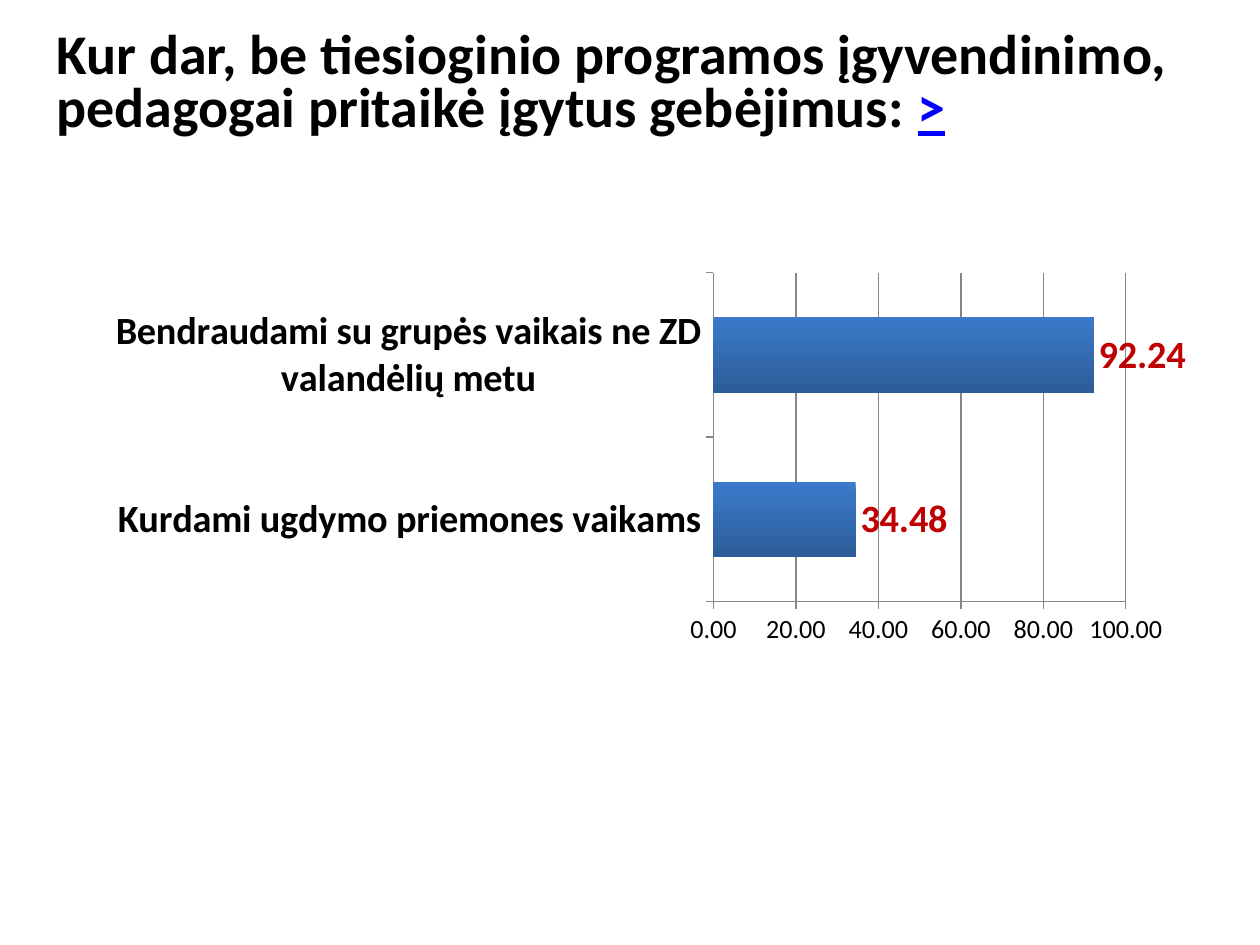
"""Build a slide with a bar chart of where teachers applied their skills."""
from dataclasses import dataclass

from lxml.etree import SubElement
from pptx import Presentation
from pptx.chart.data import CategoryChartData
from pptx.dml.color import RGBColor
from pptx.enum.chart import XL_CHART_TYPE, XL_LABEL_POSITION, XL_TICK_MARK
from pptx.enum.text import MSO_ANCHOR, MSO_AUTO_SIZE, PP_ALIGN
from pptx.oxml.ns import qn
from pptx.util import Emu, Pt


@dataclass(frozen=True)
class Theme:
    font: str = "Calibri"
    ink: str = "000000"
    link: str = "0000FF"
    value: str = "C00000"
    grid: str = "868686"
    bar_top: str = "3B7ACB"
    bar_bottom: str = "2D5D98"
    title_size: int = 32
    label_size: int = 22
    axis_size: int = 15
    chart_size: int = 18


theme = Theme()


def px(length):
    return Emu(round(length * 914400 / 126))


def write(target, text=None, *, size, color=theme.ink, bold=False, underline=None):
    if text is not None:
        target = target.add_run()
        target.text = text
    font = target.font
    font.name = theme.font
    font.size = Pt(size)
    font.bold = bold
    font.underline = underline
    font.color.rgb = RGBColor.from_string(color)


presentation = Presentation()
presentation.slide_width, presentation.slide_height = px(1260), px(945)
slide = presentation.slides.add_slide(presentation.slide_layouts[5])

title = slide.shapes.title
title.left, title.top, title.width, title.height = px(44), px(38), px(1181), px(107)
frame = title.text_frame
frame.word_wrap = True
frame.auto_size = MSO_AUTO_SIZE.NONE
frame.vertical_anchor = MSO_ANCHOR.BOTTOM
paragraph = frame.paragraphs[0]
paragraph.alignment = PP_ALIGN.LEFT
paragraph.line_spacing = 0.8
write(
    paragraph,
    "Kur dar, be tiesioginio programos įgyvendinimo, pedagogai pritaikė įgytus gebėjimus: ",
    size=theme.title_size,
    bold=True,
)
write(paragraph, ">", size=theme.title_size, color=theme.link, bold=True, underline=True)

answers = CategoryChartData(number_format="0.00")
answers.categories = [
    "Kurdami ugdymo priemones vaikams",
    "Bendraudami su grupės vaikais ne ZD valandėlių metu",
]
answers.add_series("Series 1", [34.48, 92.24])
chart = slide.shapes.add_chart(
    XL_CHART_TYPE.BAR_CLUSTERED, px(95), px(265), px(1091), px(387), answers
).chart
chart.has_legend = False
chart.has_title = False
write(chart, size=theme.chart_size)

category_axis, value_axis = chart.category_axis, chart.value_axis
write(category_axis.tick_labels, size=theme.label_size, bold=True)
write(value_axis.tick_labels, size=theme.axis_size)
value_axis.minimum_scale, value_axis.maximum_scale = 0, 100
value_axis.major_unit = 20
value_axis.tick_labels.number_format = "0.00"
value_axis.tick_labels.number_format_is_linked = False
value_axis.has_major_gridlines = True
for axis in (category_axis, value_axis):
    axis.major_tick_mark = XL_TICK_MARK.OUTSIDE
for lines in (category_axis, value_axis, value_axis.major_gridlines):
    lines.format.line.color.rgb = RGBColor.from_string(theme.grid)
    lines.format.line.width = Pt(0.75)

plot = chart.plots[0]
plot.gap_width = 118
plot.overlap = 20
plot.vary_by_categories = False
bar_fill = plot.series[0].format.fill
bar_fill.gradient()
bar_fill.gradient_angle = 270
for stop, color in zip(bar_fill.gradient_stops, (theme.bar_top, theme.bar_bottom)):
    stop.color.rgb = RGBColor.from_string(color)

plot.has_data_labels = True
labels = plot.data_labels
labels.show_value = True
labels.number_format = "0.00"
labels.number_format_is_linked = False
labels.position = XL_LABEL_POSITION.OUTSIDE_END
write(labels, size=theme.label_size, color=theme.value, bold=True)

plot_area = chart.element.find(".//" + qn("c:plotArea"))
for layout in plot_area.findall(qn("c:layout")):
    plot_area.remove(layout)
layout = SubElement(plot_area, qn("c:layout"))
plot_area.insert(0, layout)
manual = SubElement(layout, qn("c:manualLayout"))
placement = {
    "layoutTarget": "inner", "xMode": "edge", "yMode": "edge",
    "x": 0.57, "y": 0.02, "w": 0.38, "h": 0.85,
}
for name, setting in placement.items():
    SubElement(manual, qn(f"c:{name}")).set("val", str(setting))

presentation.save("out.pptx")
